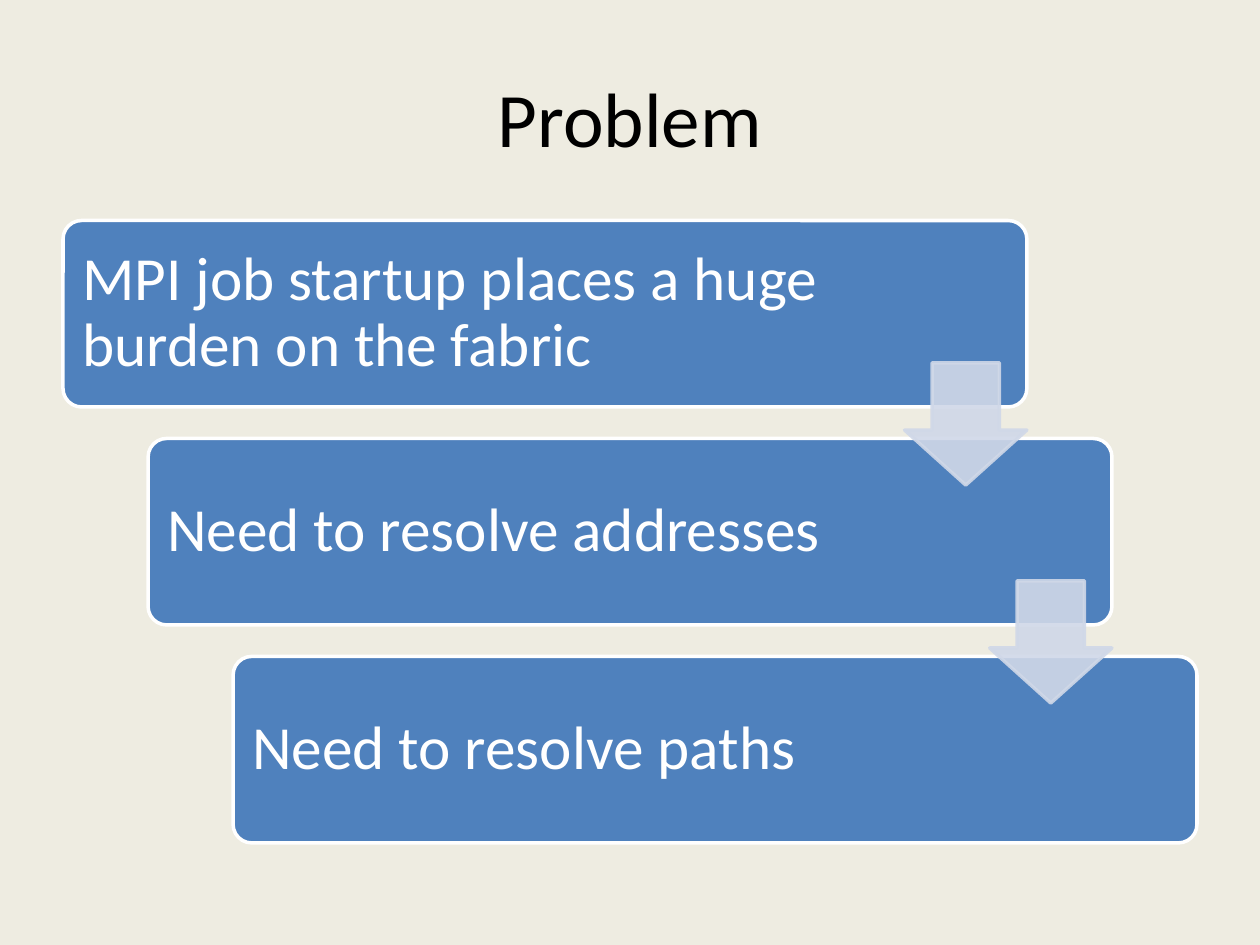
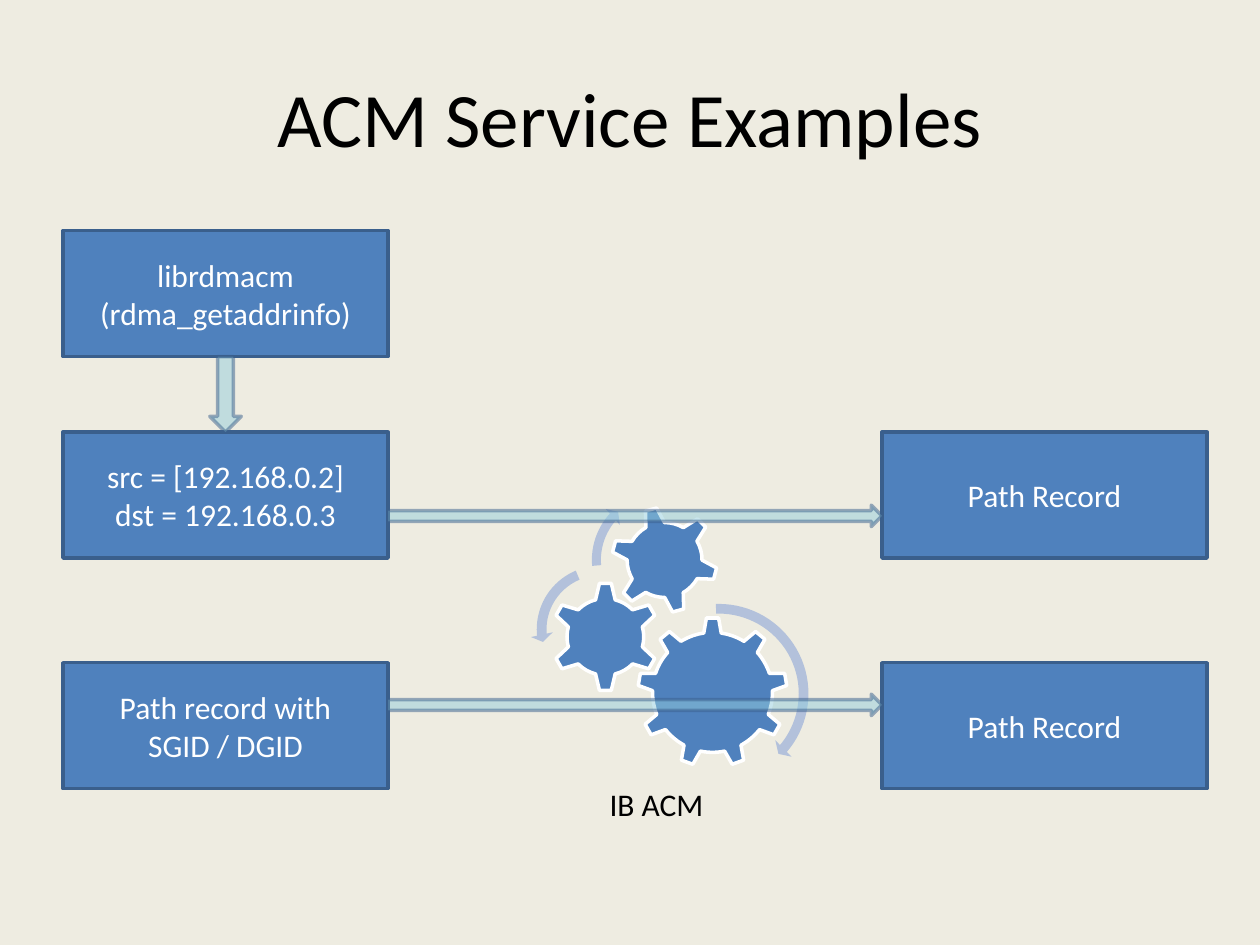
from lxml import etree
from pptx import Presentation
from pptx import util as u
from pptx.dml.color import RGBColor
from pptx.enum import shapes, text
from pptx.oxml.ns import qn

FONT = "Calibri"
CREAM = RGBColor(0xEE, 0xEC, 0xE1)
BLUE = RGBColor(0x4F, 0x81, 0xBD)
NAVY = RGBColor(0x3A, 0x5F, 0x8C)
AQUA = RGBColor(0x93, 0xCD, 0xDD)
PALE = RGBColor(0xD0, 0xD8, 0xE8)
LILAC = RGBColor(0xB3, 0xC1, 0xDB)
WHITE = RGBColor(0xFF, 0xFF, 0xFF)
BLACK = RGBColor(0, 0, 0)

KIND = shapes.MSO_SHAPE
MARGIN = 0.5

# Staircase of steps
STEP_TOP, STEP_WIDTH, STEP_HEIGHT = 1.75, 7.65, 1.48
STEP_RIGHT, STEP_DOWN = 0.675, 1.73
STEP_ARROW, STEP_ARROW_DROP = 0.97, 1.13

# Grid of the service diagram
COLUMNS = (MARGIN, 7)
ROWS = (1.83, 3.43, 5.26)
BOX_WIDTH, BOX_HEIGHT = 2.58, 1
FLOW_HEIGHT = 0.17


def set_opacity(fill, percent):
    """Make a solid fill partly transparent."""
    for color in fill._xPr.iter(qn("a:srgbClr")):
        etree.SubElement(color, qn("a:alpha")).set("val", str(percent * 1000))


def add_form(page, kind, place, fill, line=None, adjust=(), opacity=100):
    form = page.shapes.add_shape(kind, *map(u.Inches, place))
    form.shadow.inherit = False
    form.fill.solid()
    form.fill.fore_color.rgb = fill
    if line is None:
        form.line.fill.background()
    else:
        form.line.color.rgb = line
        form.line.width = u.Pt(2)
    for index, value in enumerate(adjust):
        form.adjustments[index] = value
    if opacity < 100:
        set_opacity(form.fill, opacity)
        set_opacity(form.line.fill, opacity)
    return form


def write(shape, words, size, color, align=text.PP_ALIGN.CENTER,
          anchor=text.MSO_ANCHOR.MIDDLE):
    frame = shape.text_frame
    frame.word_wrap = True
    frame.vertical_anchor = anchor
    frame.text = words
    for para in frame.paragraphs:
        para.alignment = align
        for span in para.runs:
            span.font.name = FONT
            span.font.size = u.Pt(size)
            span.font.color.rgb = color
    return frame


def add_label(page, place, words, size, anchor=text.MSO_ANCHOR.MIDDLE):
    label = page.shapes.add_textbox(*map(u.Inches, place))
    write(label, words, size, BLACK, anchor=anchor)


def add_page(deck, title):
    page = deck.slides.add_slide(deck.slide_layouts[6])
    page.background.fill.solid()
    page.background.fill.fore_color.rgb = CREAM
    add_label(page, (MARGIN, 0.3, 9, 1.25), title, 44)
    return page


def add_step(page, index, words):
    place = (MARGIN + index * STEP_RIGHT, STEP_TOP + index * STEP_DOWN,
             STEP_WIDTH, STEP_HEIGHT)
    step = add_form(page, KIND.ROUNDED_RECTANGLE, place, BLUE, WHITE, (0.1,))
    frame = write(step, words, 35, WHITE, text.PP_ALIGN.LEFT)
    frame.margin_left = u.Inches(0.11)
    frame.margin_right = u.Inches(1.6)
    frame.paragraphs[0].line_spacing = 0.9


def add_step_arrow(page, index):
    left = MARGIN + index * STEP_RIGHT + STEP_WIDTH - STEP_ARROW
    top = STEP_TOP + index * STEP_DOWN + STEP_ARROW_DROP
    add_form(page, KIND.DOWN_ARROW, (left, top, STEP_ARROW, STEP_ARROW),
             PALE, PALE, (0.55, 0.45), 90)


def add_box(page, column, row, words):
    place = (COLUMNS[column], ROWS[row], BOX_WIDTH, BOX_HEIGHT)
    write(add_form(page, KIND.RECTANGLE, place, BLUE, NAVY), words, 18, WHITE)


def add_flow(page, row, drop):
    """Arrow from the left box of a row to the right one."""
    left = COLUMNS[0] + BOX_WIDTH
    place = (left, ROWS[row] + drop, COLUMNS[1] - left, FLOW_HEIGHT)
    add_form(page, KIND.RIGHT_ARROW, place, AQUA, NAVY, opacity=50)


def add_gears(page):
    # Gears: kind, left, top, size, rotation
    for kind, left, top, size, turn in (
            (KIND.GEAR_9, 5.06, 4.9, 1.19, 0),
            (KIND.GEAR_6, 4.37, 4.62, 0.87, 0),
            (KIND.GEAR_6, 4.85, 4.02, 0.85, 345)):
        gear = add_form(page, kind, (left, top, size, size), BLUE, WHITE)
        gear.rotation = turn
    # Turning arrows: kind, left, top, size, adjustments
    for kind, left, top, size, adjust in (
            (KIND.CIRCULAR_ARROW, 4.94, 4.74, 1.53,
             (0.05, 2.99, 24.2, 160.88, 0.06)),
            (KIND.LEFT_CIRCULAR_ARROW, 4.21, 4.44, 1.11,
             (0.07, 4.3, 104.89, 148.38, 0.08)),
            (KIND.CIRCULAR_ARROW, 4.65, 3.85, 1.19,
             (0.06, 3.94, 133.14, 105.08, 0.07))):
        add_form(page, kind, (left, top, size, size), LILAC, adjust=adjust)


def build_problem(deck):
    page = add_page(deck, "Problem")
    steps = ("MPI job startup places a huge burden on the fabric",
             "Need to resolve addresses",
             "Need to resolve paths")
    for index, words in enumerate(steps):
        add_step(page, index, words)
    for index in range(len(steps) - 1):
        add_step_arrow(page, index)


def build_examples(deck):
    page = add_page(deck, "ACM Service Examples")
    add_gears(page)
    for column, row, words in (
            (0, 0, "librdmacm\n(rdma_getaddrinfo)"),
            (0, 1, "src = [192.168.0.2]\ndst = 192.168.0.3"),
            (0, 2, "Path record with\nSGID / DGID"),
            (1, 1, "Path Record"),
            (1, 2, "Path Record")):
        add_box(page, column, row, words)
    add_flow(page, 1, 0.58)
    add_flow(page, 2, 0.25)
    # Arrow from the library down to the address request
    width, top = 0.25, ROWS[0] + BOX_HEIGHT
    left = COLUMNS[0] + (BOX_WIDTH - width) / 2
    add_form(page, KIND.DOWN_ARROW, (left, top, width, ROWS[1] - top),
             AQUA, NAVY, opacity=50)
    add_label(page, (4.25, 6.18, 1.92, 0.4), "IB ACM", 18, text.MSO_ANCHOR.TOP)


def main():
    deck = Presentation()
    deck.slide_width, deck.slide_height = u.Inches(10), u.Inches(7.5)
    build_problem(deck)
    build_examples(deck)
    deck.save("out.pptx")


if __name__ == "__main__":
    main()
